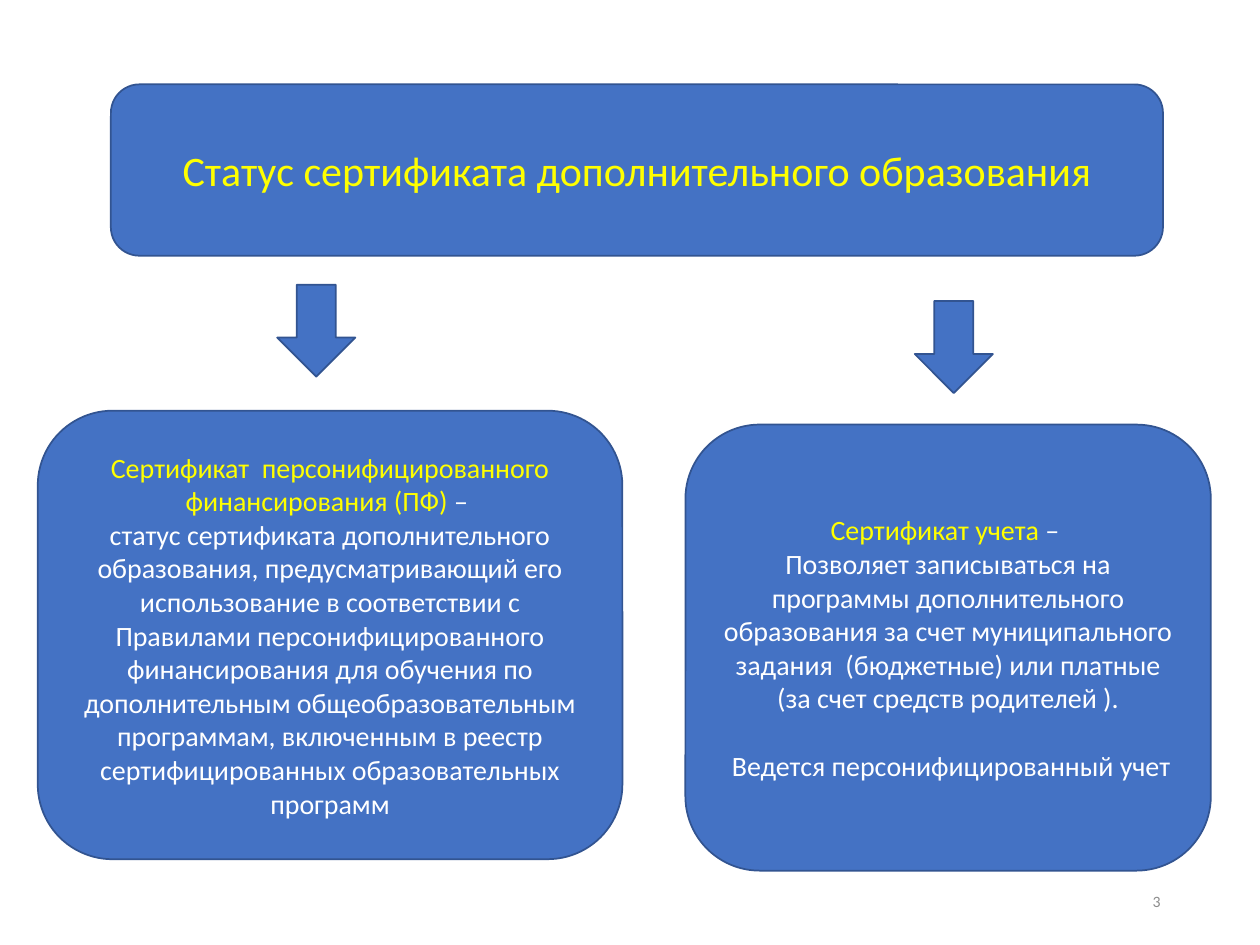
from pptx import Presentation
from pptx import util as u
from pptx.dml.color import RGBColor
from pptx.enum import shapes, text

BLUE = RGBColor(0x44, 0x72, 0xC4)
OUTLINE = RGBColor(0x32, 0x54, 0x91)
YELLOW = RGBColor(0xFF, 0xFF, 0x00)
WHITE = RGBColor(0xFF, 0xFF, 0xFF)
GRAY = RGBColor(0x8C, 0x8C, 0x8C)


class Deck:
    """Holds the style and the current slide."""
    font = "Calibri"

    def __init__(self, width, height):
        self.prs = Presentation()
        self.prs.slide_width = u.Inches(width)
        self.prs.slide_height = u.Inches(height)
        self.s = self.prs.slides.add_slide(self.prs.slide_layouts[6])

    def set_text(self, tf, paragraphs, size, align=text.PP_ALIGN.CENTER):
        """Each paragraph is a list of (wording, colour) runs."""
        tf.word_wrap = True
        tf.vertical_anchor = text.MSO_ANCHOR.MIDDLE
        for i, runs in enumerate(paragraphs):
            p = tf.paragraphs[0] if i == 0 else tf.add_paragraph()
            p.alignment = align
            p.font.name, p.font.size = self.font, u.Pt(size)
            for wording, color in runs:
                r = p.add_run()
                r.text = wording
                r.font.color.rgb = color

    def shape(self, kind, *box):
        sp = self.s.shapes.add_shape(kind, *map(u.Inches, box))
        sp.shadow.inherit = False
        sp.fill.solid()
        sp.fill.fore_color.rgb = BLUE
        sp.line.color.rgb = OUTLINE
        sp.line.width = u.Pt(1)
        return sp

    def card(self, box, paragraphs, size):
        sp = self.shape(shapes.MSO_SHAPE.ROUNDED_RECTANGLE, *box)
        self.set_text(sp.text_frame, paragraphs, size)
        return sp

    def arrow(self, left, top):
        self.shape(shapes.MSO_SHAPE.DOWN_ARROW, left, top, 0.62, 0.73)

    def label(self, box, wording, size, color):
        sp = self.s.shapes.add_textbox(*map(u.Inches, box))
        self.set_text(sp.text_frame, [[(wording, color)]], size,
                      text.PP_ALIGN.RIGHT)


def main():
    deck = Deck(10, 7.5)

    # Slide number
    deck.label((7.06, 6.95, 2.25, 0.4), "3", 9, GRAY)

    # Heading
    deck.card((0.88, 0.67, 8.35, 1.36),
              [[("Статус сертификата дополнительного образования", YELLOW)]], 24)

    # Two kinds of certificate
    deck.card((0.3, 3.26, 4.64, 3.56), [
        [("Сертификат  персонифицированного финансирования (ПФ) ", YELLOW),
         ("– ", WHITE)],
        [("статус сертификата дополнительного образования, предусматривающий "
          "его использование в соответствии с Правилами персонифицированного "
          "финансирования для обучения по дополнительным общеобразовательным "
          "программам, включенным в реестр сертифицированных образовательных "
          "программ", WHITE)],
    ], 16)
    record = deck.card((5.44, 3.37, 4.17, 3.54), [
        [("Сертификат учета ", YELLOW), ("– ", WHITE)],
        [("Позволяет записываться на программы дополнительного образования "
          "за счет муниципального задания  (бюджетные) или платные "
          "(за счет средств родителей ).", WHITE)],
        [(" Ведется персонифицированный учет", WHITE)],
    ], 16)
    record.text_frame.paragraphs[-1].space_before = u.Pt(19.5)

    # Arrows from the heading to the certificates
    for left, top in ((2.2, 2.26), (7.26, 2.39)):
        deck.arrow(left, top)

    deck.prs.save("out.pptx")


if __name__ == "__main__":
    main()
